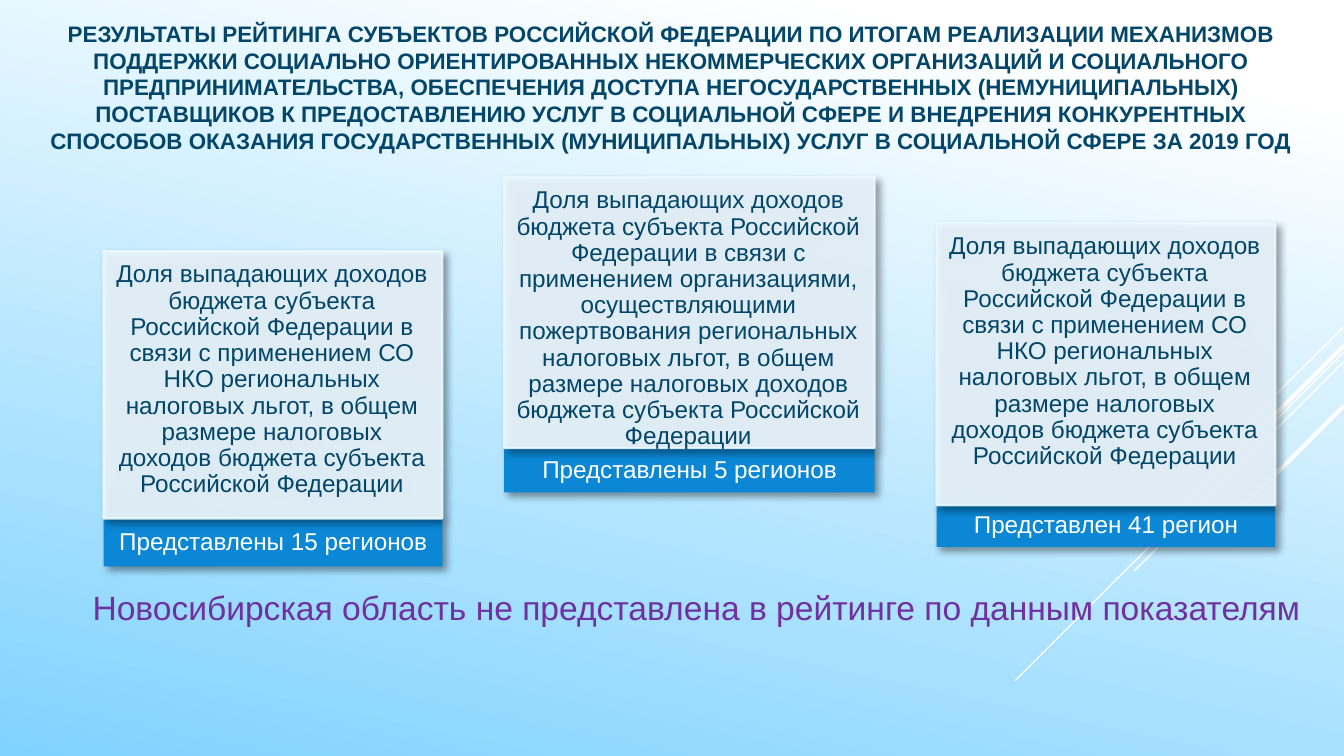
from lxml import etree
from pptx import Presentation
from pptx.dml.color import RGBColor
from pptx.enum import shapes, text
from pptx.oxml import parse_xml
from pptx.oxml.ns import qn
from pptx.util import Cm, Pt

WHITE = RGBColor(0xFF, 0xFF, 0xFF)
SKY = RGBColor(0x80, 0xD3, 0xFF)
BLUE = RGBColor(0x0B, 0x87, 0xD6)
PALE = RGBColor(0xEA, 0xF6, 0xFE)
EDGE = RGBColor(0xEA, 0xFA, 0xFE)
NAVY = RGBColor(0x03, 0x46, 0x69)
PURPLE = RGBColor(0x70, 0x30, 0xA0)
WIDTH, HEIGHT = 25.4, 14.29

TITLE = (
    "РЕЗУЛЬТАТЫ РЕЙТИНГА СУБЪЕКТОВ РОССИЙСКОЙ ФЕДЕРАЦИИ ПО ИТОГАМ РЕАЛИЗАЦИИ "
    "МЕХАНИЗМОВ ПОДДЕРЖКИ СОЦИАЛЬНО ОРИЕНТИРОВАННЫХ НЕКОММЕРЧЕСКИХ ОРГАНИЗАЦИЙ "
    "И СОЦИАЛЬНОГО ПРЕДПРИНИМАТЕЛЬСТВА, ОБЕСПЕЧЕНИЯ ДОСТУПА НЕГОСУДАРСТВЕННЫХ "
    "(НЕМУНИЦИПАЛЬНЫХ) ПОСТАВЩИКОВ К ПРЕДОСТАВЛЕНИЮ УСЛУГ В СОЦИАЛЬНОЙ СФЕРЕ "
    "И ВНЕДРЕНИЯ КОНКУРЕНТНЫХ СПОСОБОВ ОКАЗАНИЯ ГОСУДАРСТВЕННЫХ (МУНИЦИПАЛЬНЫХ) "
    "УСЛУГ В СОЦИАЛЬНОЙ СФЕРЕ ЗА 2019 ГОД")
NOTE = "Новосибирская область не представлена в рейтинге по данным показателям"
SHARE = (
    "Доля выпадающих доходов бюджета субъекта Российской Федерации в связи с "
    "применением {} региональных налоговых льгот, в общем размере налоговых "
    "доходов бюджета субъекта Российской Федерации")
NGO = "СО НКО"
DONORS = "организациями, осуществляющими пожертвования"

# Left, top, width, body height, footer height, payers, footer text
CARDS = [
    (1.96, 4.75, 6.4, 5.05, 0.91, NGO, "Представлены 15 регионов"),
    (9.53, 3.35, 7, 5.12, 0.84, DONORS, "Представлены 5 регионов"),
    (17.7, 4.22, 6.4, 5.33, 0.79, NGO, "Представлен 41 регион"),
]
# Start height on the right edge, run to the lower left, weight
RAYS = [(6.17, 1.9, 0.75), (6.65, 6.22, 0.75), (6.83, 3.96, 0.75),
        (6.53, 3.63, 2.25), (7.67, 2.64, 2.25)]

SHADOW = (
    '<a:effectLst xmlns:a="http://schemas.openxmlformats.org/drawingml/2006/main">'
    '<a:outerShdw blurRad="50800" dist="38100" dir="2700000" algn="tl" rotWithShape="0">'
    '<a:srgbClr val="000000"><a:alpha val="40000"/></a:srgbClr>'
    '</a:outerShdw></a:effectLst>')


def paint(slide):
    fill = slide.background.fill
    fill.gradient()
    fill.gradient_angle = 258
    for stop, color, pos in zip(fill.gradient_stops, (WHITE, SKY), (0.1, 1)):
        stop.color.rgb = color
        stop.position = pos


def ray(slide, top, run, weight):
    line = slide.shapes.add_connector(
        shapes.MSO_CONNECTOR.STRAIGHT, Cm(WIDTH), Cm(top), Cm(WIDTH - run), Cm(top + run))
    line.line.color.rgb = WHITE
    line.line.width = Pt(weight)
    etree.SubElement(line._element.spPr, qn("a:effectLst"))


def write(frame, words, size, color, align=text.PP_ALIGN.CENTER):
    para = frame.paragraphs[0]
    para.text = words
    para.alignment = align
    font = para.font
    font.name, font.size, font.color.rgb = "Arial", Pt(size), color
    return para


def fade(fill):
    color = fill._xPr.find(qn("a:solidFill"))[0]
    etree.SubElement(color, qn("a:alpha"), val="90000")


def panel(slide, box, color, words, ink, pads, gap):
    shape = slide.shapes.add_shape(
        shapes.MSO_SHAPE.RECTANGLE, *[Cm(n) for n in box])
    shape.fill.solid()
    shape.fill.fore_color.rgb = color
    shape.line.fill.background()
    frame = shape.text_frame
    frame.word_wrap = True
    (frame.margin_left, frame.margin_top,
     frame.margin_right, frame.margin_bottom) = [Cm(n) for n in pads]
    para = write(frame, words, 13, ink)
    para.line_spacing = 0.9
    para.space_after = Pt(gap)
    return shape


def card(slide, left, top, width, tall, low, payers, count):
    # Footer with the count of regions
    foot = panel(slide, (left, top + tall, width, low), BLUE, count, WHITE,
                 (0.25, 0.15, 0.25, 0.15), 5)
    foot.text_frame.vertical_anchor = text.MSO_ANCHOR.MIDDLE
    # Body with the name of the measure
    body = panel(slide, (left, top, width, tall), PALE, SHARE.format(payers), NAVY,
                 (0.2, 0.2, 0.25, 0.28), 2)
    body.text_frame.vertical_anchor = text.MSO_ANCHOR.TOP
    body.line.color.rgb = EDGE
    body.line.width = Pt(1.25)
    fade(body.fill)
    fade(body.line.fill)
    for shape in (foot, body):
        shape._element.spPr.append(parse_xml(SHADOW))


def label(slide, box, wrap):
    frame = slide.shapes.add_textbox(*[Cm(n) for n in box]).text_frame
    frame.word_wrap = wrap
    frame.auto_size = text.MSO_AUTO_SIZE.SHAPE_TO_FIT_TEXT
    return frame


def main():
    deck = Presentation()
    deck.slide_width, deck.slide_height = Cm(WIDTH), Cm(HEIGHT)
    slide = deck.slides.add_slide(deck.slide_layouts[6])

    # Backdrop
    paint(slide)
    for item in RAYS:
        ray(slide, *item)

    # Measures
    for item in CARDS:
        card(slide, *item)

    # Conclusion and title
    write(label(slide, (1.5, 10.97, 23.57, 1.02), False), NOTE, 18, PURPLE,
          text.PP_ALIGN.LEFT)
    write(label(slide, (0.69, 0.25, 24, 2.82), True), TITLE, 12, NAVY).font.bold = True

    deck.save("out.pptx")


if __name__ == "__main__":
    main()
